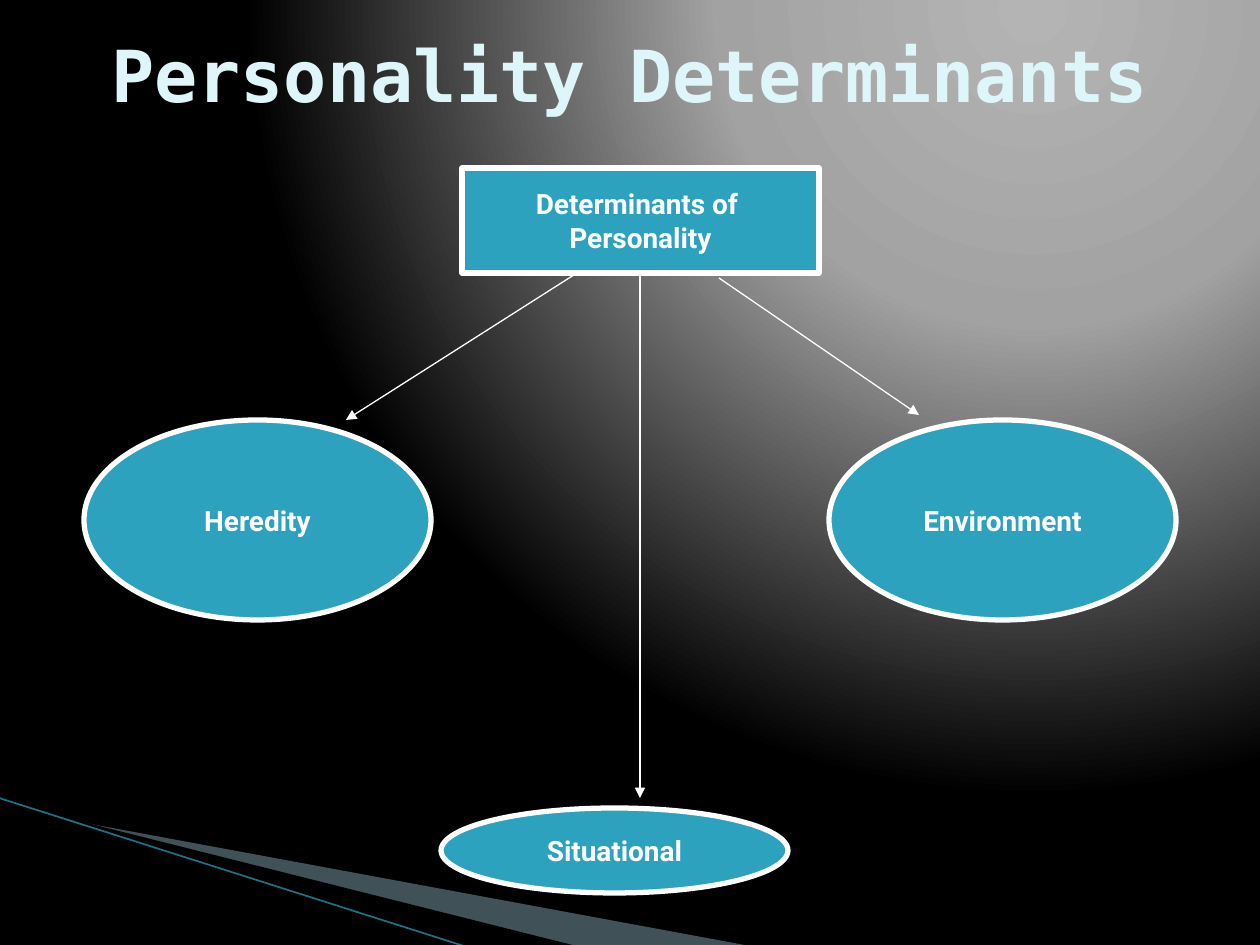
from typing import NamedTuple

import pptx
import pptx.dml.color
import pptx.enum.shapes
import pptx.enum.text
import pptx.oxml
import pptx.oxml.ns
import pptx.util

RGB = pptx.dml.color.RGBColor
SHAPE = pptx.enum.shapes.MSO_SHAPE
EMU_PER_PX = 914400 / 126

WHITE = RGB(0xFF, 0xFF, 0xFF)
BLACK = RGB(0x00, 0x00, 0x00)
PALE_CYAN = RGB(0xDE, 0xF5, 0xFA)
TEAL = RGB(0x2D, 0xA2, 0xBF)
DARK_TEAL = RGB(0x1A, 0x73, 0x87)
SWOOSH_BLUE = RGB(0xA0, 0xCB, 0xDC)
GLOW_STOPS = [(0, RGB(0xB4, 0xB4, 0xB4)), (40, RGB(0xA2, 0xA2, 0xA2)), (100, BLACK)]


class Node(NamedTuple):
    lines: list[str]
    left: int
    top: int
    width: int
    height: int
    outline: SHAPE = SHAPE.OVAL


class Link(NamedTuple):
    start: tuple[int, int]
    end: tuple[int, int]


class Wedge(NamedTuple):
    points: list[tuple[int, int]]
    color: RGB
    opacity: int = 100


NODES = [
    Node(["Determinants of ", "Personality"], 462, 168, 357, 105, SHAPE.RECTANGLE),
    Node(["Heredity"], 84, 420, 347, 200),
    Node(["Environment"], 829, 420, 347, 200),
    Node(["Situational"], 441, 808, 347, 85),
]
ARROWS = [
    Link((577, 273), (346, 420)),
    Link((719, 278), (919, 415)),
    Link((640, 273), (640, 798)),
]
WEDGES = [
    Wedge([(69, 820), (750, 946), (575, 946), (69, 819)], SWOOSH_BLUE, 40),
    Wedge([(67, 818), (576, 946), (469, 947), (68, 819)], BLACK),
]
EDGE = Link((-1, 798), (467, 947))


def px(length: int) -> pptx.util.Emu:
    return pptx.util.Emu(round(length * EMU_PER_PX))


def drawing_element(tag: str, content: str = "", **attributes: str):
    """Build an element of the DrawingML namespace."""
    listed = "".join(f' {key}="{value}"' for key, value in attributes.items())
    namespace = pptx.oxml.ns.nsdecls("a")
    return pptx.oxml.parse_xml(f"<a:{tag} {namespace}{listed}>{content}</a:{tag}>")


def write_text(frame, lines: list[str], *, font: str, size: int, color: RGB, wrap: bool) -> None:
    frame.word_wrap = wrap
    frame.auto_size = pptx.enum.text.MSO_AUTO_SIZE.NONE
    frame.vertical_anchor = pptx.enum.text.MSO_ANCHOR.MIDDLE
    for index, line in enumerate(lines):
        paragraph = frame.add_paragraph() if index else frame.paragraphs[0]
        paragraph.alignment = pptx.enum.text.PP_ALIGN.CENTER
        run = paragraph.add_run()
        run.text = line
        run.font.name = font
        run.font.size = pptx.util.Pt(size)
        run.font.bold = True
        run.font.color.rgb = color


def paint_background(slide) -> None:
    """Fill the background with a circular glow centred near the top right."""
    slide.background.fill.gradient()
    glow = slide.element.find(".//" + pptx.oxml.ns.qn("a:gradFill"))
    for child in list(glow):
        glow.remove(child)
    stops = "".join(
        f'<a:gs pos="{position * 1000}"><a:srgbClr val="{color}"/></a:gs>'
        for position, color in GLOW_STOPS
    )
    glow.append(drawing_element("gsLst", stops))
    glow.append(drawing_element("path", '<a:fillToRect l="65000" b="98000"/>', path="circle"))


def add_wedge(slide, wedge: Wedge) -> None:
    first, *rest = wedge.points
    builder = slide.shapes.build_freeform(*first, scale=EMU_PER_PX)
    builder.add_line_segments(rest, close=True)
    shape = builder.convert_to_shape()
    shape.shadow.inherit = False
    shape.fill.solid()
    shape.fill.fore_color.rgb = wedge.color
    shape.line.fill.background()
    if wedge.opacity < 100:
        color = shape.element.spPr.find(".//" + pptx.oxml.ns.qn("a:srgbClr"))
        color.append(drawing_element("alpha", val=str(wedge.opacity * 1000)))


def add_link(slide, link: Link, color: RGB, width: float, arrow: bool = False) -> None:
    connector = slide.shapes.add_connector(
        pptx.enum.shapes.MSO_CONNECTOR.STRAIGHT, *map(px, link.start + link.end)
    )
    connector.line.color.rgb = color
    connector.line.width = pptx.util.Pt(width)
    if arrow:
        connector.line._get_or_add_ln().append(drawing_element("tailEnd", type="triangle"))
    connector.element.spPr.append(drawing_element("effectLst"))


def add_node(slide, node: Node) -> None:
    shape = slide.shapes.add_shape(
        node.outline, px(node.left), px(node.top), px(node.width), px(node.height)
    )
    shape.shadow.inherit = False
    shape.fill.solid()
    shape.fill.fore_color.rgb = TEAL
    shape.line.color.rgb = WHITE
    shape.line.width = pptx.util.Pt(3)
    write_text(shape.text_frame, node.lines, font="Roboto", size=16, color=WHITE, wrap=False)


def main() -> None:
    deck = pptx.Presentation()
    deck.slide_width, deck.slide_height = px(1260), px(945)
    slide = deck.slides.add_slide(deck.slide_layouts.get_by_name("Title Only"))
    paint_background(slide)

    for wedge in WEDGES:
        add_wedge(slide, wedge)
    add_link(slide, EDGE, DARK_TEAL, 0.95)

    title = slide.shapes.title
    title.left, title.top, title.width, title.height = px(63), px(21), px(1134), px(105)
    write_text(title.text_frame, ["Personality Determinants"],
               font="DejaVu Sans Mono", size=41, color=PALE_CYAN, wrap=True)

    for node in NODES:
        add_node(slide, node)
    for arrow in ARROWS:
        add_link(slide, arrow, WHITE, 0.75, arrow=True)

    deck.save("out.pptx")


if __name__ == "__main__":
    main()
